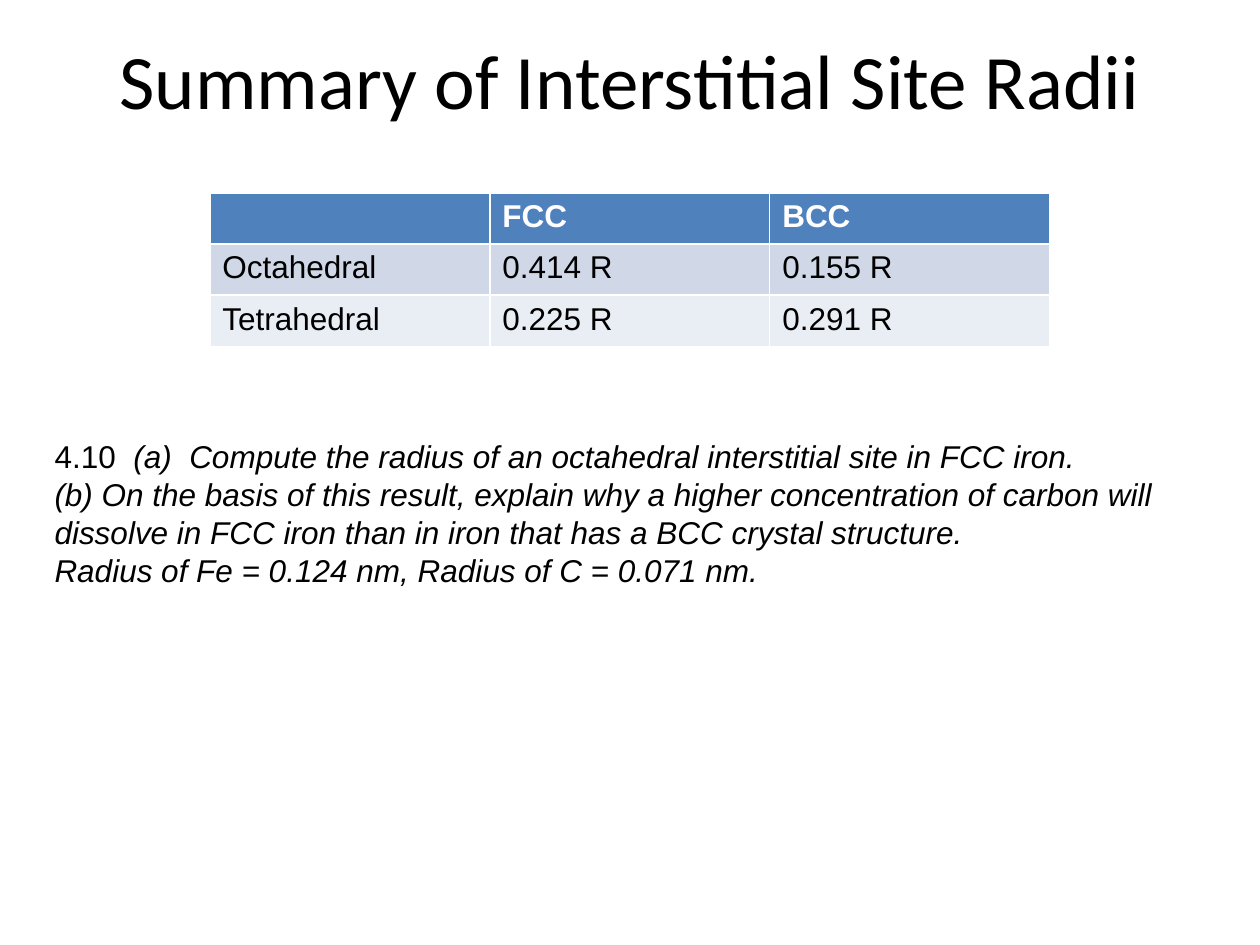
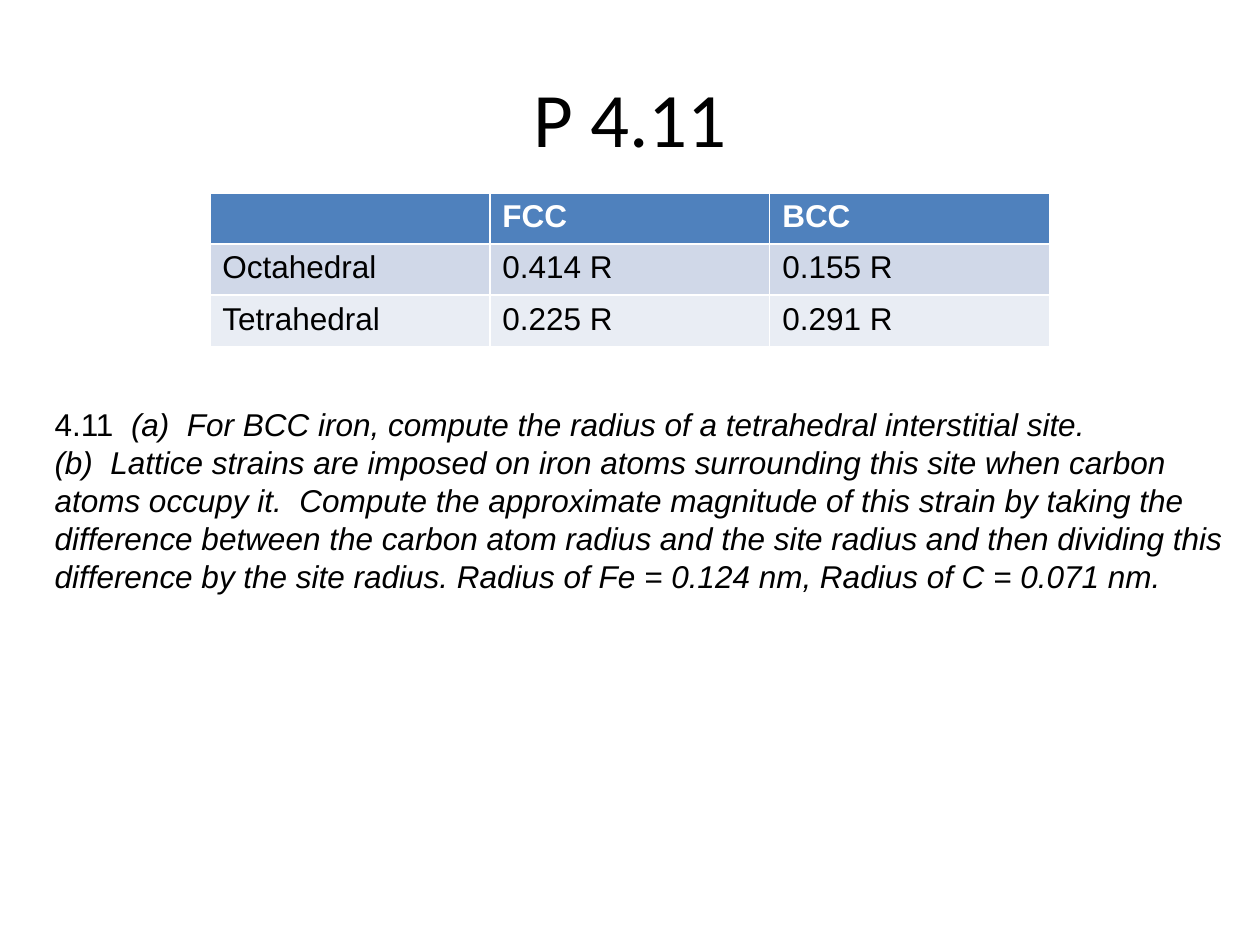
from pptx import Presentation
from pptx.dml.color import RGBColor
from pptx.enum.text import MSO_ANCHOR, PP_ALIGN
from pptx.util import Cm, Pt

CENTER = PP_ALIGN.CENTER
LEFT = PP_ALIGN.LEFT
MIDDLE = MSO_ANCHOR.MIDDLE
TOP = MSO_ANCHOR.TOP

BLACK = "000000"
WHITE = "FFFFFF"
ROW_FILLS = ["4F81BD", "D0D8E8", "E9EDF4"]

TITLE_FORMAT = {"name": "Calibri", "size": Pt(44)}
BODY_FORMAT = {"name": "Arial", "size": Pt(18)}
ITALIC_FORMAT = {**BODY_FORMAT, "italic": True}
HEADER_FORMAT = {**BODY_FORMAT, "bold": True}
CELL_FORMAT = {**BODY_FORMAT, "bold": False}

SITE_RADII = [
    ["", "FCC", "BCC"],
    ["Octahedral", "0.414 R", "0.155 R"],
    ["Tetrahedral", "0.225 R", "0.291 R"],
]

PROBLEMS = [
    {
        "title": "Summary of Interstitial Site Radii",
        "title_top": 0,
        "question_box": (0.85, 8.69, 23.71, 3.33),
        "question": [
            [("4.10  ", BODY_FORMAT),
             ("(a)  Compute the radius of an octahedral interstitial site in FCC iron.", ITALIC_FORMAT)],
            [("(b) On the basis of this result, explain why a higher concentration of carbon "
              "will dissolve in FCC iron than in iron that has a BCC crystal structure.", ITALIC_FORMAT)],
            [("Radius of Fe = 0.124 nm, Radius of C = 0.071 nm.", ITALIC_FORMAT)],
        ],
    },
    {
        "title": "P 4.11",
        "title_top": 0.76,
        "question_box": (0.85, 8.05, 24.13, 4.88),
        "question": [
            [("4.11  ", BODY_FORMAT),
             ("(a)  For BCC iron, compute the radius of a tetrahedral interstitial site.", ITALIC_FORMAT)],
            [("(b)  Lattice strains are imposed on iron atoms surrounding this site when carbon "
              "atoms occupy it.  Compute the approximate magnitude of this strain by taking the "
              "difference between the carbon atom radius and the site radius and then dividing "
              "this difference by the site radius. Radius of Fe = 0.124 nm, "
              "Radius of C = 0.071 nm.", ITALIC_FORMAT)],
        ],
    },
]


def add_run(paragraph, text, font_format, color=BLACK):
    run = paragraph.add_run()
    run.text = text
    for attribute, value in font_format.items():
        setattr(run.font, attribute, value)
    run.font.color.rgb = RGBColor.from_string(color)


def add_text(slide, box, paragraphs, alignment, anchor):
    text_frame = slide.shapes.add_textbox(*map(Cm, box)).text_frame
    text_frame.word_wrap = True
    text_frame.vertical_anchor = anchor
    for index, runs in enumerate(paragraphs):
        paragraph = text_frame.add_paragraph() if index else text_frame.paragraphs[0]
        paragraph.alignment = alignment
        for text, font_format in runs:
            add_run(paragraph, text, font_format)


presentation = Presentation()
presentation.slide_width = Cm(25.4)
presentation.slide_height = Cm(19.05)
blank_layout = presentation.slide_layouts[6]

for problem in PROBLEMS:
    slide = presentation.slides.add_slide(blank_layout)
    title_box = (1.27, problem["title_top"], 22.86, 3.18)
    add_text(slide, title_box, [[(problem["title"], TITLE_FORMAT)]], CENTER, MIDDLE)
    add_text(slide, problem["question_box"], problem["question"], LEFT, TOP)

    table = slide.shapes.add_table(
        len(SITE_RADII), len(SITE_RADII[0]), Cm(4.23), Cm(3.89), Cm(16.93), Cm(3.09)
    ).table
    for row_index, values in enumerate(SITE_RADII):
        is_header = row_index == 0
        for column_index, value in enumerate(values):
            cell = table.cell(row_index, column_index)
            cell.fill.solid()
            cell.fill.fore_color.rgb = RGBColor.from_string(ROW_FILLS[row_index])
            if value:
                add_run(
                    cell.text_frame.paragraphs[0],
                    value,
                    HEADER_FORMAT if is_header else CELL_FORMAT,
                    WHITE if is_header else BLACK,
                )

presentation.save("out.pptx")
